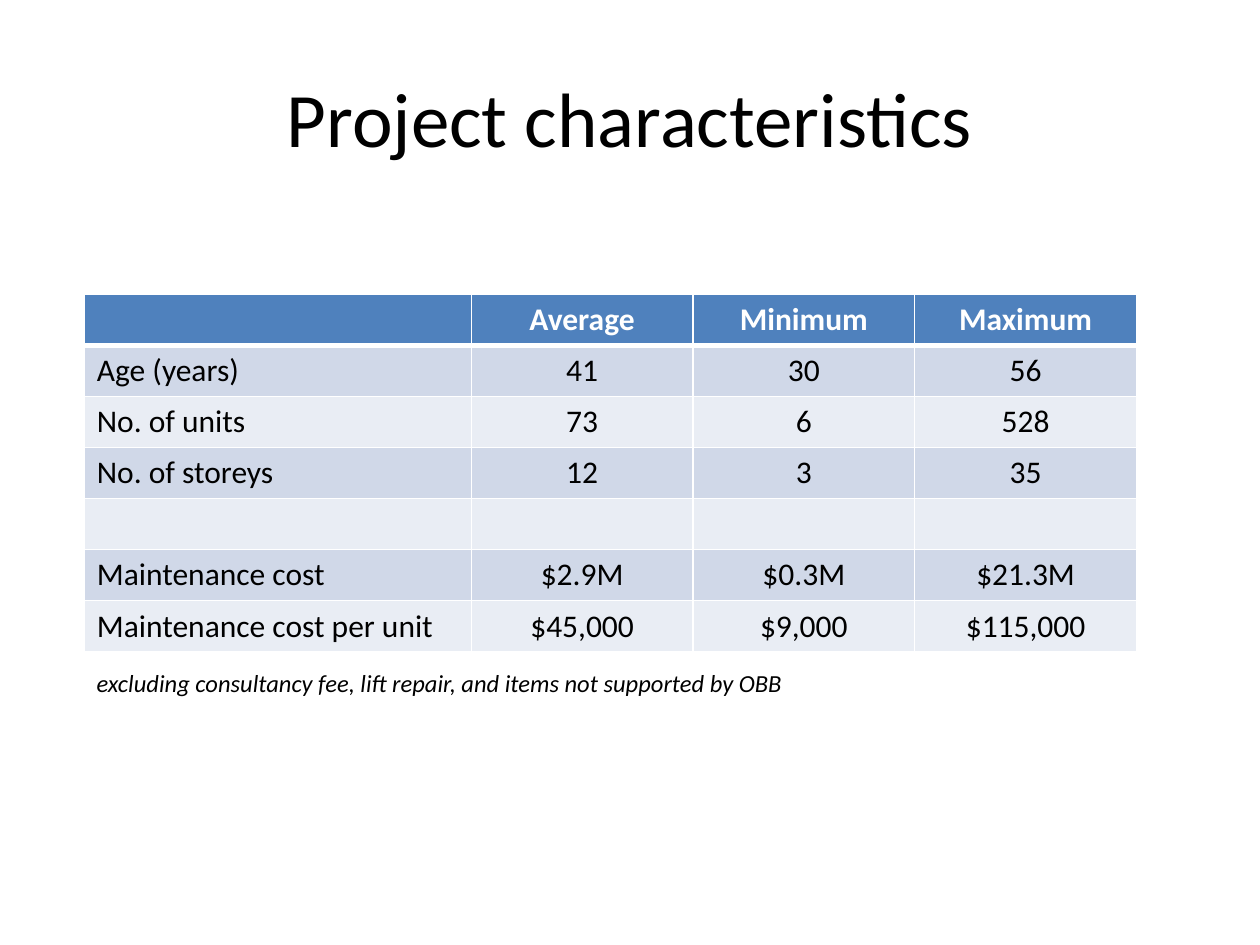
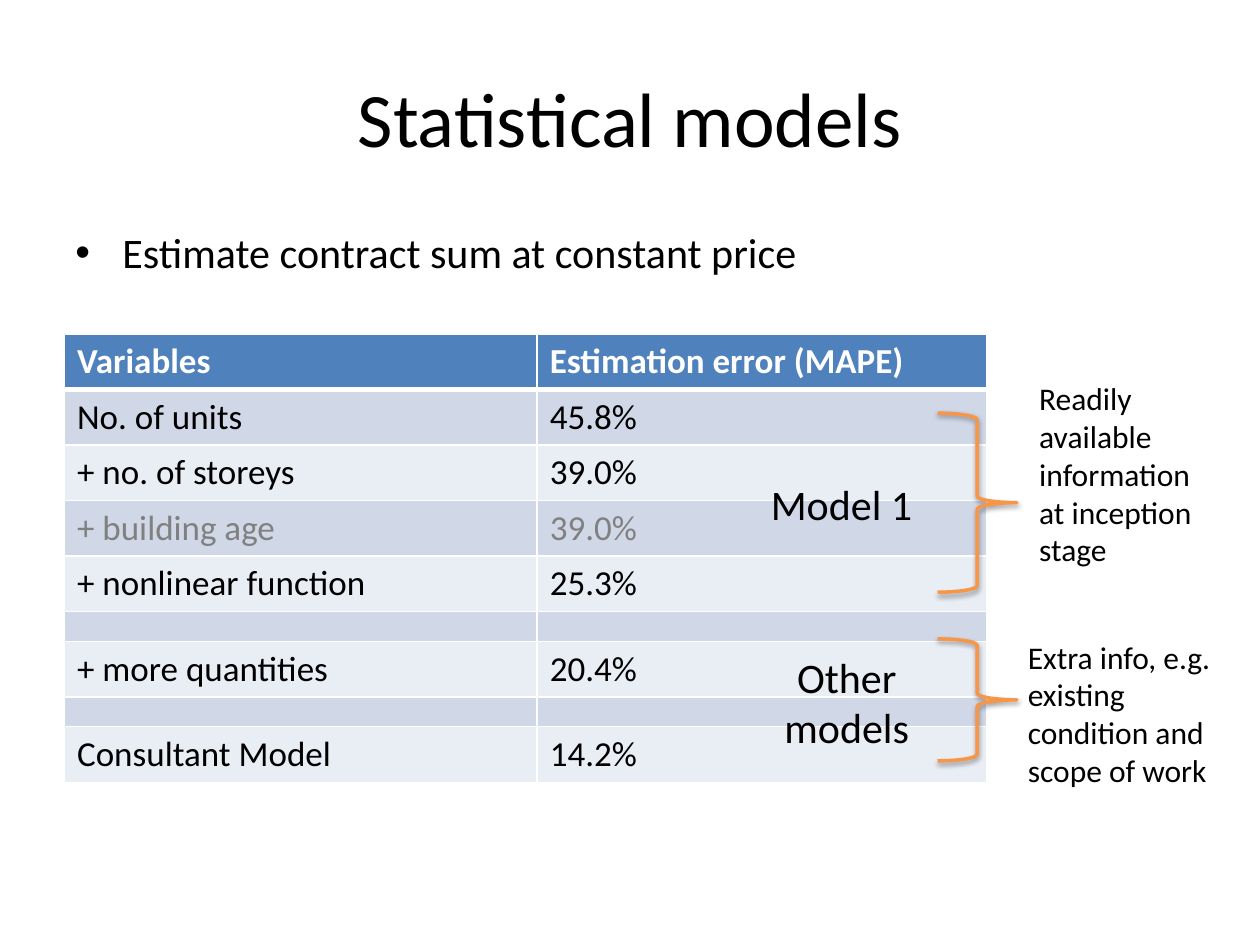
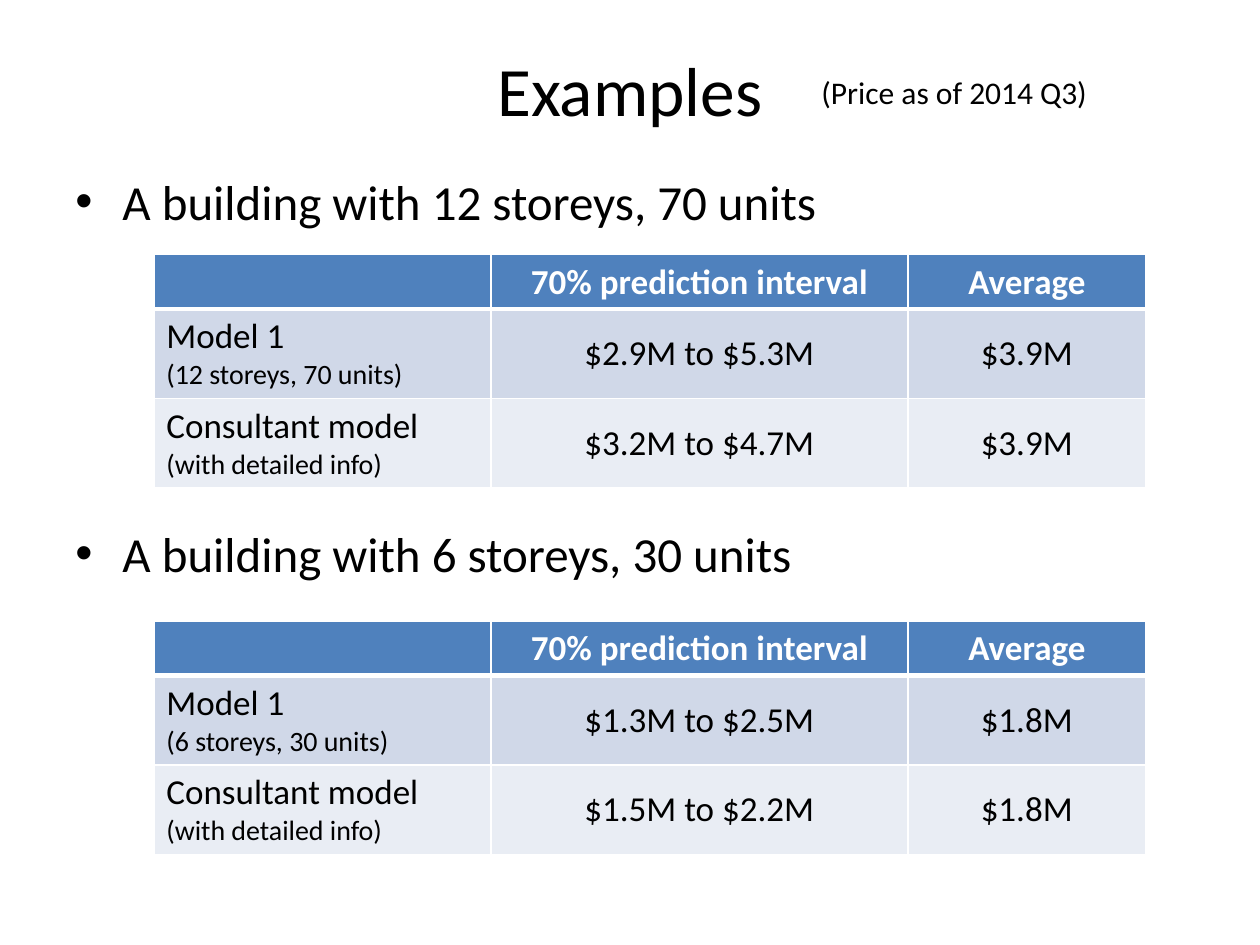
from lxml.etree import SubElement
from pptx import Presentation
from pptx.dml.color import RGBColor
from pptx.enum.shapes import MSO_SHAPE
from pptx.enum.text import MSO_ANCHOR, PP_ALIGN
from pptx.oxml import parse_xml
from pptx.oxml.ns import nsdecls, qn
from pptx.util import Cm, Pt

BLACK, WHITE, GREY = "000000", "FFFFFF", "808080"
BLUE, ORANGE = "4F81BD", "F79646"
BANDS = ("D0D8E8", "E9EDF4")


def color(value):
    """Turn a hex string into a colour."""
    return RGBColor.from_string(value)


class SlideBuilder:
    """Holds the shared style and the slide being built."""

    font = "Calibri"

    def __init__(self):
        """Open an empty 4:3 deck."""
        self.deck = Presentation()
        self.deck.slide_width, self.deck.slide_height = Cm(25.4), Cm(19.05)
        self.page = None

    def style(self, paragraph, size, fill=BLACK, bold=False, italic=False, align=PP_ALIGN.LEFT):
        """Format a paragraph and its runs."""
        paragraph.alignment = align
        for span in paragraph.runs:
            span.font.name, span.font.size = self.font, Pt(size)
            span.font.bold, span.font.italic = bold, italic
            span.font.color.rgb = color(fill)

    def text(self, words, left, top, width, height, size, wrap=True, anchor=MSO_ANCHOR.TOP, **look):
        """Add a text box and return its frame."""
        box = self.page.shapes.add_textbox(Cm(left), Cm(top), Cm(width), Cm(height))
        frame = box.text_frame
        frame.word_wrap, frame.vertical_anchor = wrap, anchor
        frame.text = words
        for para in frame.paragraphs:
            self.style(para, size, **look)
        return frame

    def start(self, title, height=3.18, size=44):
        """Begin a new slide with a centred title."""
        self.page = self.deck.slides.add_slide(self.deck.slide_layouts[6])
        self.text(title, 1.27, 0.76, 22.86, height, size,
                  anchor=MSO_ANCHOR.MIDDLE, align=PP_ALIGN.CENTER)

    def bullets(self, words, top, size, gap=0):
        """Add bulleted lines with a gap in points between them."""
        frame = self.text(words, 1.27, top, 22.86, 12.57, size)
        for index, para in enumerate(frame.paragraphs):
            para.space_before = Pt(gap if index else 0)
            properties = para._p.get_or_add_pPr()
            properties.set("marL", str(Cm(0.95)))
            properties.set("indent", str(-Cm(0.95)))
            SubElement(properties, qn("a:buFont"), typeface="Arial")
            SubElement(properties, qn("a:buChar"), char="•")

    def borders(self, cell, row):
        """Draw white cell borders, heavier under the header row."""
        weights = {"L": 1, "R": 1, "T": 3 if row == 1 else 1, "B": 3 if row == 0 else 1}
        properties = cell._tc.get_or_add_tcPr()
        for index, (side, weight) in enumerate(weights.items()):
            properties.insert(index, parse_xml(
                f'<a:ln{side} {nsdecls("a")} w="{Pt(weight)}"><a:solidFill>'
                f'<a:srgbClr val="{WHITE}"/></a:solidFill></a:ln{side}>'))

    def table(self, rows, left, top, widths, heights, size, centred=True, middle=False, muted=None):
        """Add a banded table whose first row is the header."""
        frame = self.page.shapes.add_table(len(rows), len(widths), Cm(left), Cm(top),
                                           Cm(sum(widths)), Cm(sum(heights)))
        grid = frame.table
        for column, width in zip(grid.columns, widths):
            column.width = Cm(width)
        for row, (values, height) in enumerate(zip(rows, heights)):
            grid.rows[row].height = Cm(height)
            for column, value in enumerate(values):
                cell = grid.cell(row, column)
                cell.fill.solid()
                cell.fill.fore_color.rgb = color(BANDS[(row - 1) % 2] if row else BLUE)
                self.borders(cell, row)
                cell.vertical_anchor = MSO_ANCHOR.MIDDLE if middle else MSO_ANCHOR.TOP
                cell.text = value
                align = PP_ALIGN.CENTER if centred and column else PP_ALIGN.LEFT
                ink = GREY if row == muted else BLACK if row else WHITE
                for index, para in enumerate(cell.text_frame.paragraphs):
                    self.style(para, 16 if index else size, ink, row == 0, align=align)
                    if not value:
                        points = size if height > 1 else 8
                        SubElement(para._p, qn("a:endParaRPr"), sz=str(points * 100))

    def brace(self, top, height):
        """Add a shadowed orange right brace."""
        brace = self.page.shapes.add_shape(MSO_SHAPE.RIGHT_BRACE, Cm(18.9), Cm(top),
                                           Cm(1.6), Cm(height))
        brace.fill.background()
        brace.line.color.rgb, brace.line.width = color(ORANGE), Pt(2)
        brace.shadow.inherit = False
        effects = brace._element.spPr.find(qn("a:effectLst"))
        shadow = SubElement(effects, qn("a:outerShdw"), blurRad=str(Pt(3.1)), dist=str(Pt(1.6)),
                            dir="5400000", rotWithShape="0")
        tint = SubElement(shadow, qn("a:srgbClr"), val=BLACK)
        SubElement(tint, qn("a:alpha"), val="38000")


def project_characteristics(builder):
    """Build the slide on project characteristics."""
    builder.start("Project characteristics")
    rows = [
        ("", "Average", "Minimum", "Maximum"),
        ("Age (years)", "41", "30", "56"),
        ("No. of units", "73", "6", "528"),
        ("No. of storeys", "12", "3", "35"),
        ("", "", "", ""),
        ("Maintenance cost", "$2.9M", "$0.3M", "$21.3M"),
        ("Maintenance cost per unit", "$45,000", "$9,000", "$115,000"),
    ]
    builder.table(rows, 1.7, 5.93, [7.8] + [4.47] * 3, [1.03] * len(rows), 18)
    builder.text("excluding consultancy fee, lift repair, and items not supported by OBB",
                 1.7, 13.34, 14.48, 0.86, 14, wrap=False, italic=True)


def statistical_models(builder):
    """Build the slide on statistical models."""
    builder.start("Statistical models")
    builder.bullets("Estimate contract sum at constant price", 4.45, 24)
    rows = [
        ("Variables", "Estimation error (MAPE)"),
        ("No. of units", "45.8%"),
        ("+ no. of storeys", "39.0%"),
        ("+ building age", "39.0%"),
        ("+ nonlinear function", "25.3%"),
        ("", ""),
        ("+ more quantities", "20.4%"),
        ("", ""),
        ("Consultant Model", "14.2%"),
    ]
    heights = [1.12 if name else 0.6 for name, error in rows]
    builder.table(rows, 1.3, 6.73, [9.53, 9.07], heights, 20, centred=False, muted=3)
    builder.brace(8.33, 3.61)
    builder.text("Readily available information at inception stage", 20.7, 7.52, 4.04, 4.11, 18)
    builder.brace(12.88, 2.46)
    builder.text("Extra info, e.g. existing condition and scope of work",
                 20.47, 12.73, 4.27, 3.33, 18)
    builder.text("Model 1", 15.29, 9.53, 3.38, 1.27, 24, wrap=False)
    builder.text("Other models", 15.24, 13, 3.66, 2.31, 24, align=PP_ALIGN.CENTER)


def examples(builder):
    """Build the slide comparing two example buildings."""
    builder.start("Examples", 2.08, 39.6)
    builder.bullets("A building with 12 storeys, 70 units\nA building with 6 storeys, 30 units",
                    3.33, 28, gap=167.5)
    builder.text("(Price as of 2014 Q3)", 16.31, 1.35, 5.94, 1.02, 18, wrap=False)
    buildings = [
        (5.13, "12 storeys, 70 units", "$2.9M to $5.3M", "$3.2M to $4.7M", "$3.9M"),
        (12.52, "6 storeys, 30 units", "$1.3M to $2.5M", "$1.5M to $2.2M", "$1.8M"),
    ]
    for top, size, model_range, consultant_range, average in buildings:
        rows = [
            ("", "70% prediction interval", "Average"),
            (f"Model 1\n({size})", model_range, average),
            ("Consultant model\n(with detailed info)", consultant_range, average),
        ]
        builder.table(rows, 3.1, top, [6.8, 8.4, 4.8], [1.1, 1.8, 1.8], 20, middle=True)


def main():
    """Build and save the deck."""
    builder = SlideBuilder()
    for build in (project_characteristics, statistical_models, examples):
        build(builder)
    builder.deck.save("out.pptx")


if __name__ == "__main__":
    main()
